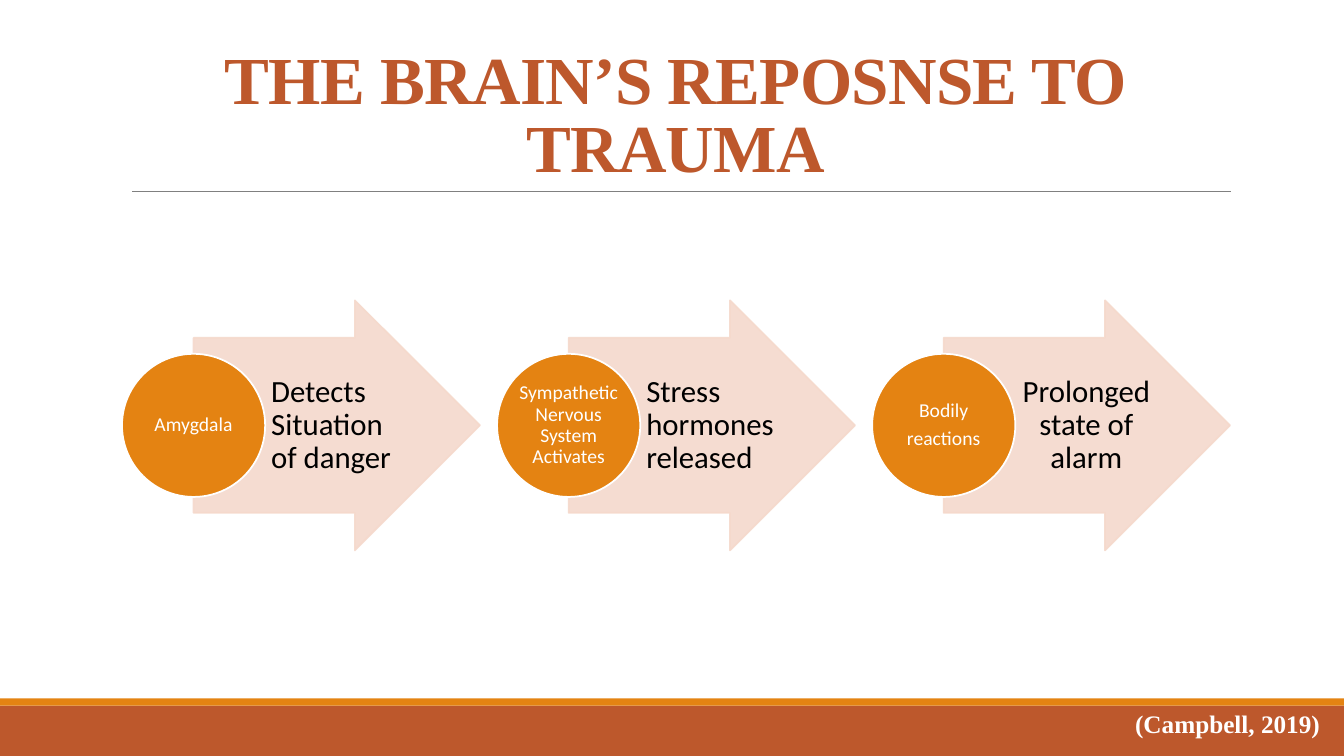
import pptx
import pptx.dml.color
import pptx.enum.shapes
import pptx.enum.text
import pptx.oxml
import pptx.oxml.ns
import pptx.util
from dataclasses import dataclass

Inches, Pt = pptx.util.Inches, pptx.util.Pt
Shapes = pptx.enum.shapes.MSO_SHAPE
Align = pptx.enum.text.PP_ALIGN
Anchor = pptx.enum.text.MSO_ANCHOR

TITLE = "THE BRAIN’S REPOSNSE TO TRAUMA"
CITATION = "(Campbell, 2019)"
STAGES = [  # circle lines, arrow text, arrow text alignment
    (["Amygdala"], "Detects Situation of danger", Align.LEFT),
    (["Sympathetic Nervous System Activates"], "Stress hormones released", Align.LEFT),
    (["Bodily", "reactions"], "Prolonged state of alarm", Align.CENTER),
]


@dataclass(frozen=True)
class Theme:
    rust: str = "BD582C"
    orange: str = "E48312"
    blush: str = "F5D9CC"
    rule: str = "808080"
    white: str = "FFFFFF"
    black: str = "000000"
    heading_font: str = "Times New Roman"
    body_font: str = "Calibri"
    title_size: int = 48
    arrow_size: int = 22
    citation_size: int = 18
    circle_size: int = 14


theme = Theme()
WIDTH, HEIGHT = 13.33, 7.5
FOOTER_TOP, STRIPE = 7.0, 0.07
FIRST_CENTER, PITCH, MIDDLE = 1.92, 3.72, 4.22  # circle centres along the row
ARROW_WIDTH, ARROW_HEIGHT = 2.84, 2.48
CIRCLE, CIRCLE_TEXT = 1.42, 1.0
ARROW_TEXT_WIDTH, ARROW_TEXT_HEIGHT = 1.38, 1.74


def rgb(color):
    return pptx.dml.color.RGBColor.from_string(color)


def set_opacity(fill_format, percent):
    color = fill_format._xPr.find(".//" + pptx.oxml.ns.qn("a:srgbClr"))
    alpha = pptx.oxml.parse_xml(
        f'<a:alpha {pptx.oxml.ns.nsdecls("a")} val="{percent * 1000}"/>')
    color.append(alpha)


def add_shape(slide, kind, box, fill, line=None, opacity=None):
    shape = slide.shapes.add_shape(kind, *map(Inches, box))
    shape.shadow.inherit = False
    shape.fill.solid()
    shape.fill.fore_color.rgb = rgb(fill)
    if line:
        shape.line.color.rgb = rgb(line)
        shape.line.width = Pt(1.25)
    else:
        shape.line.fill.background()
    if opacity:
        set_opacity(shape.fill, opacity)
        set_opacity(shape.line.fill, opacity)
    return shape


def add_text(slide, box, lines, size, color, font=theme.body_font, bold=False,
             align=Align.LEFT, anchor=Anchor.MIDDLE, spacing=0.9, after=0.35,
             margins=(0.1, 0.05, 0.1, 0.05), wrap=True):
    """Add a text box; after is the paragraph gap as a share of the type size."""
    frame = slide.shapes.add_textbox(*map(Inches, box)).text_frame
    frame.word_wrap = wrap
    frame.vertical_anchor = anchor
    (frame.margin_left, frame.margin_top,
     frame.margin_right, frame.margin_bottom) = map(Inches, margins)
    frame.text = "\n".join(lines)
    for paragraph in frame.paragraphs:
        paragraph.alignment = align
        paragraph.line_spacing = spacing
        paragraph.space_after = Pt(size * after)
        paragraph.font.name = font
        paragraph.font.size = Pt(size)
        paragraph.font.bold = bold
        paragraph.font.color.rgb = rgb(color)
    return frame


def add_frame(slide):
    """Draw the footer bars, the rule, the title and the citation."""
    add_shape(slide, Shapes.RECTANGLE,
              (0, FOOTER_TOP, WIDTH, HEIGHT - FOOTER_TOP), theme.rust)
    add_shape(slide, Shapes.RECTANGLE,
              (0, FOOTER_TOP - STRIPE, WIDTH, STRIPE), theme.orange)
    rule = slide.shapes.add_connector(
        pptx.enum.shapes.MSO_CONNECTOR.STRAIGHT,
        *map(Inches, (1.31, 1.9, 12.21, 1.9)))
    rule.line.color.rgb = rgb(theme.rule)
    rule.line.width = Pt(0.5)
    rule._element.spPr.append(
        pptx.oxml.parse_xml(f'<a:effectLst {pptx.oxml.ns.nsdecls("a")}/>'))
    title = add_text(slide, (1.2, 0.31, 11, 1.59), [TITLE], theme.title_size,
                     theme.rust, theme.heading_font, True, Align.CENTER,
                     Anchor.BOTTOM, spacing=0.85, after=0)
    title.paragraphs[0].runs[0].font._element.set("spc", "-50")
    add_text(slide, (11.16, 6.98, 2.12, 0.4), [CITATION], theme.citation_size,
             theme.white, theme.heading_font, True, anchor=Anchor.TOP,
             spacing=1.0, after=0, wrap=False)


def add_stage(slide, center, circle_lines, arrow_text, arrow_align):
    arrow = add_shape(slide, Shapes.RIGHT_ARROW,
                      (center, MIDDLE - ARROW_HEIGHT / 2, ARROW_WIDTH, ARROW_HEIGHT),
                      theme.blush, theme.blush, opacity=90)
    arrow.adjustments[0], arrow.adjustments[1] = 0.7, 0.5
    add_text(slide, (center + CIRCLE / 2, MIDDLE - ARROW_TEXT_HEIGHT / 2,
                     ARROW_TEXT_WIDTH, ARROW_TEXT_HEIGHT),
             [arrow_text], theme.arrow_size, theme.black, align=arrow_align,
             margins=(0.06, 0.02, 0.03, 0.02))
    add_shape(slide, Shapes.OVAL,
              (center - CIRCLE / 2, MIDDLE - CIRCLE / 2, CIRCLE, CIRCLE),
              theme.orange, theme.white)
    add_text(slide, (center - CIRCLE_TEXT / 2, MIDDLE - CIRCLE_TEXT / 2,
                     CIRCLE_TEXT, CIRCLE_TEXT),
             circle_lines, theme.circle_size, theme.white, align=Align.CENTER,
             margins=(0.01,) * 4)


def main():
    presentation = pptx.Presentation()
    presentation.slide_width = Inches(WIDTH)
    presentation.slide_height = Inches(HEIGHT)
    slide = presentation.slides.add_slide(presentation.slide_layouts[6])
    add_frame(slide)
    for index, stage in enumerate(STAGES):
        add_stage(slide, FIRST_CENTER + index * PITCH, *stage)
    presentation.save("out.pptx")


if __name__ == "__main__":
    main()
